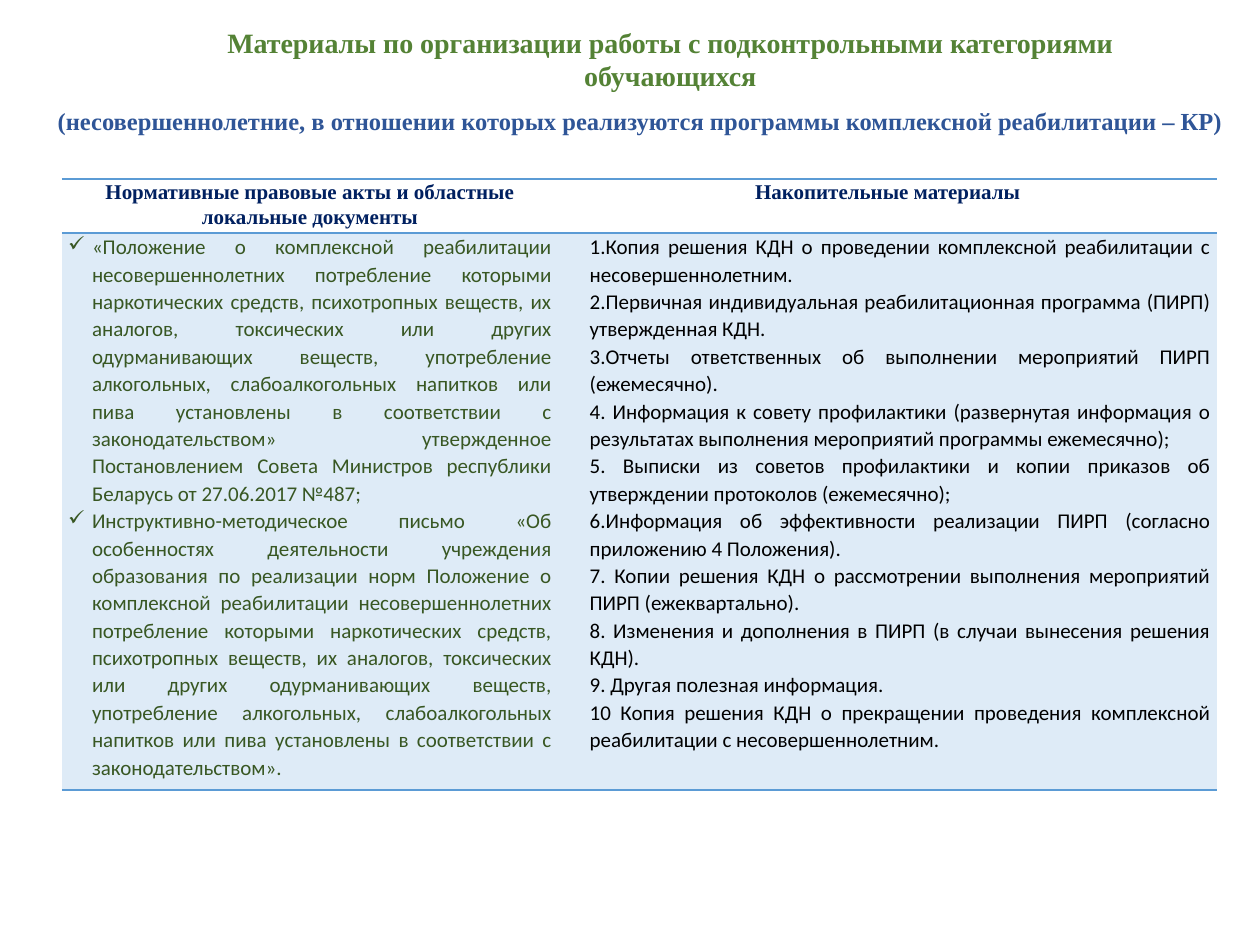
import pptx
import pptx.dml.color
import pptx.enum.text
import pptx.oxml.ns
import pptx.util
from lxml import etree
from pptx.util import Inches

COLORS = {
    "title": "548235",
    "subtitle": "2F5597",
    "header": "002060",
    "documents": "385723",
    "materials": "000000",
    "rule": "5B9BD5",
    "body_fill": "DEEBF7",
}
ALIGN = pptx.enum.text.PP_ALIGN
qn = pptx.oxml.ns.qn

HEADERS = ["Нормативные правовые акты и областные локальные документы", "Накопительные материалы"]
DOCUMENTS = [
    "«Положение о комплексной реабилитации несовершеннолетних потребление которыми наркотических средств, "
    "психотропных веществ, их аналогов, токсических или других одурманивающих веществ, употребление "
    "алкогольных, слабоалкогольных напитков или пива установлены в соответствии с законодательством» "
    "утвержденное Постановлением Совета Министров республики Беларусь от 27.06.2017 №487;",
    "Инструктивно-методическое письмо «Об особенностях деятельности учреждения образования по реализации "
    "норм Положение о комплексной реабилитации несовершеннолетних потребление которыми наркотических "
    "средств, психотропных веществ, их аналогов, токсических или других одурманивающих веществ, "
    "употребление алкогольных, слабоалкогольных напитков или пива установлены в соответствии с "
    "законодательством».",
]
MATERIALS = [
    "1.Копия решения КДН о проведении комплексной реабилитации с несовершеннолетним.",
    "2.Первичная индивидуальная реабилитационная программа (ПИРП) утвержденная КДН.",
    "3.Отчеты ответственных об выполнении мероприятий ПИРП (ежемесячно).",
    "4. Информация к совету профилактики (развернутая информация о результатах выполнения мероприятий "
    "программы ежемесячно);",
    "5. Выписки из советов профилактики и копии приказов об утверждении протоколов (ежемесячно);",
    "6.Информация об эффективности реализации ПИРП (согласно приложению 4 Положения).",
    "7. Копии решения КДН о рассмотрении выполнения мероприятий ПИРП (ежеквартально).",
    "8. Изменения и дополнения в ПИРП (в случаи вынесения решения КДН).",
    "9. Другая полезная информация.",
    "10 Копия решения КДН о прекращении проведения комплексной реабилитации с несовершеннолетним.",
]


def format_runs(para, size, font, color, bold):
    for span in para.runs:
        span.font.size = pptx.util.Pt(size)
        span.font.name = font
        span.font.bold = bold
        span.font.color.rgb = pptx.dml.color.RGBColor.from_string(COLORS[color])


def add_rule(cell, side):
    """Draw a 1 pt border on one side of a cell: "lnT" or "lnB"."""
    line = etree.SubElement(cell._tc.get_or_add_tcPr(), qn("a:" + side), w="12700")
    fill = etree.SubElement(line, qn("a:solidFill"))
    etree.SubElement(fill, qn("a:srgbClr"), val=COLORS["rule"])


deck = pptx.Presentation()
deck.slide_width, deck.slide_height = Inches(10), Inches(7.5)
page = deck.slides.add_slide(deck.slide_layouts[5])

title = page.shapes.title
title.left, title.top, title.width, title.height = Inches(1.58), Inches(0.15), Inches(7.48), Inches(0.64)
title.text_frame.text = "Материалы по организации работы с подконтрольными категориями обучающихся"
subtitle = page.shapes.add_textbox(Inches(0.36), Inches(0.79), Inches(9.46), Inches(0.34))
subtitle.text_frame.text = (
    "(несовершеннолетние, в отношении которых реализуются программы комплексной реабилитации – КР)"
)
for box, size, color, align in [(title, 16, "title", ALIGN.CENTER), (subtitle, 14, "subtitle", ALIGN.LEFT)]:
    frame = box.text_frame
    frame.word_wrap = True
    frame.auto_size = pptx.enum.text.MSO_AUTO_SIZE.NONE
    frame.vertical_anchor = pptx.enum.text.MSO_ANCHOR.TOP
    frame.paragraphs[0].alignment = align
    format_runs(frame.paragraphs[0], size, "Times New Roman", color, True)

table_frame = page.shapes.add_table(2, 2, Inches(0.49), Inches(1.42), Inches(9.17), Inches(4.85))
table = table_frame.table
table.first_row = True
table.horz_banding = False
# The built-in "No Style, No Grid" table style
table._tbl.tblPr.find(qn("a:tableStyleId")).text = "{2D5ABB26-0587-4C30-8999-92F81FD0307C}"
for column, width in zip(table.columns, [3.94, 5.23]):
    column.width = Inches(width)
for row, height in zip(table.rows, [0.43, 4.42]):
    row.height = Inches(height)

for cell in table.iter_cells():
    cell.margin_left = cell.margin_right = Inches(0.05)
    cell.margin_top = cell.margin_bottom = 0

for index, header in enumerate(HEADERS):
    cell = table.cell(0, index)
    add_rule(cell, "lnT")
    add_rule(cell, "lnB")
    cell.fill.background()
    cell.text_frame.text = header
    para = cell.text_frame.paragraphs[0]
    para.alignment = ALIGN.CENTER
    para.line_spacing = 1.07
    format_runs(para, 12, "Times New Roman", "header", True)

columns = [(DOCUMENTS, "documents", 0.19, -0.19, "✓"), (MATERIALS, "materials", 0.2, 0, None)]
for index, (items, color, margin, indent, bullet) in enumerate(columns):
    cell = table.cell(1, index)
    add_rule(cell, "lnB")
    cell.fill.solid()
    cell.fill.fore_color.rgb = pptx.dml.color.RGBColor.from_string(COLORS["body_fill"])
    cell.text_frame.text = "\n".join(items)
    for para in cell.text_frame.paragraphs:
        para.alignment = ALIGN.JUSTIFY
        para.line_spacing = 1.07
        properties = para._p.get_or_add_pPr()
        properties.set("marL", str(Inches(margin)))
        properties.set("indent", str(Inches(indent)))
        if bullet:
            etree.SubElement(properties, qn("a:buChar"), char=bullet)
        format_runs(para, 12, "Calibri", color, False)

deck.save("out.pptx")
